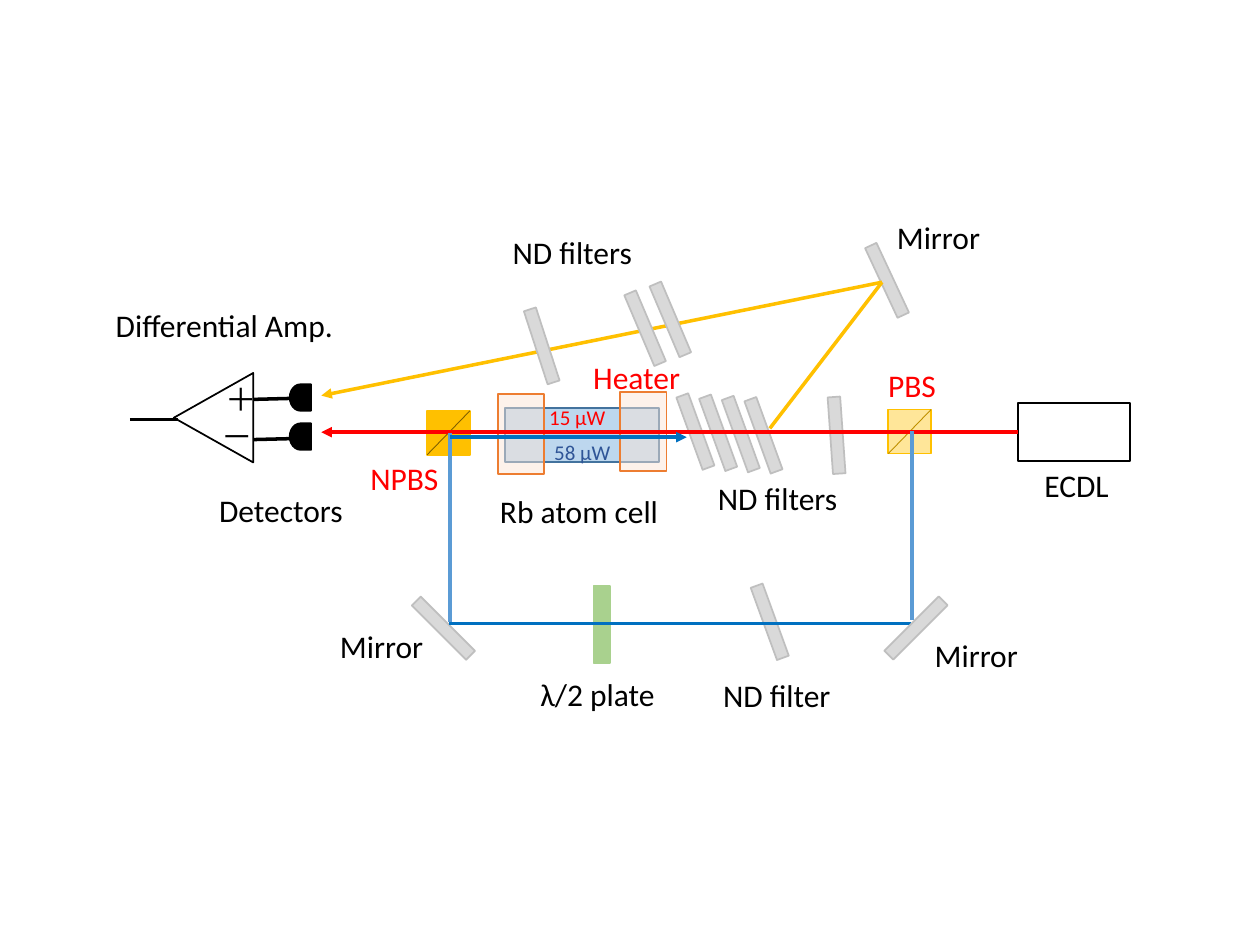
from dataclasses import dataclass

from lxml.etree import SubElement
from pptx import Presentation
from pptx.dml.color import RGBColor
from pptx.enum.shapes import MSO_CONNECTOR, MSO_SHAPE
from pptx.enum.text import MSO_AUTO_SIZE
from pptx.oxml.ns import qn
from pptx.util import Inches, Pt


@dataclass(frozen=True)
class Theme:
    font: str = "Calibri"
    label_size: int = 18
    power_size: int = 12
    black: str = "000000"
    white: str = "FFFFFF"
    red: str = "FF0000"
    gold: str = "FFC000"
    pale_gold: str = "FFE699"
    brown: str = "BF9000"
    dark_brown: str = "806000"
    blue: str = "0070C0"
    light_blue: str = "5B9BD5"
    navy: str = "2F5597"
    cell_fill: str = "BDD7EE"
    cell_line: str = "43739E"
    heater_fill: str = "FBE5D6"
    heater_line: str = "ED7D31"
    green: str = "A9D18E"
    glass: str = "D9D9D9"
    glass_edge: str = "BFBFBF"


theme = Theme()
presentation = Presentation()
presentation.slide_width = Inches(10)
presentation.slide_height = Inches(7.5)
slide = presentation.slides.add_slide(presentation.slide_layouts[6])


def add_part(left, top, width, height, fill, line, kind=MSO_SHAPE.RECTANGLE, rotation=0):
    shape = slide.shapes.add_shape(kind, Inches(left), Inches(top), Inches(width), Inches(height))
    shape.rotation = rotation
    shape.shadow.inherit = False
    shape.fill.solid()
    shape.fill.fore_color.rgb = RGBColor.from_string(fill)
    shape.line.color.rgb = RGBColor.from_string(line)
    shape.line.width = Pt(1)
    return shape


def add_line(start, end, color, width=2, arrow=False):
    connector = slide.shapes.add_connector(
        MSO_CONNECTOR.STRAIGHT, *(Inches(value) for value in (*start, *end)))
    connector.line.color.rgb = RGBColor.from_string(color)
    connector.line.width = Pt(width)
    if arrow:
        SubElement(connector.line._get_or_add_ln(), qn("a:tailEnd"), type="triangle")
    SubElement(connector._element.spPr, qn("a:effectLst"))
    return connector


# Atom cell with its two half-transparent heaters
add_part(4.01, 3.24, 1.22, 0.43, theme.cell_fill, theme.cell_line)
for left, top in [(4.92, 3.11), (3.95, 3.13)]:
    heater = add_part(left, top, 0.37, 0.63, theme.heater_fill, theme.heater_line)
    heater_color = heater._element.spPr.find(qn("a:solidFill"))[0]
    SubElement(heater_color, qn("a:alpha"), val="48000")

# Half-wave plate
add_part(4.71, 4.65, 0.13, 0.61, theme.green, theme.green)

# Mirror and filters that lie behind the beams
filter_row = [(5.47 + 0.18 * step, 3.12 + 0.01 * step, 340) for step in range(4)]
for left, top, rotation in [(6.99, 1.92, 335), (6.06, 4.63, 340), *filter_row, (6.59, 3.15, 356)]:
    add_part(left, top, 0.1, 0.61, theme.glass, theme.glass_edge, rotation=rotation)

# Beam splitters and their diagonals
for left, top, fill, diagonal in [
    (7.05, 3.25, theme.pale_gold, theme.brown),
    (3.39, 3.26, theme.gold, theme.dark_brown),
]:
    add_part(left, top, 0.34, 0.35, fill, theme.gold)
    add_line((left + 0.34, top), (left, top + 0.35), diagonal, width=0.5)

# Laser and probe beam
laser = add_part(8.08, 3.2, 0.89, 0.46, theme.white, theme.black)
probe = add_line((8.08, 3.43), (2.55, 3.43), theme.red, arrow=True)
probe.begin_connect(laser, 1)

# Detectors, their wires and the differential amplifier
for detector_top, wire_start, wire_end in [
    (3.36, (1.97, 3.49), (2.36, 3.48)),
    (3.05, (2.01, 3.17), (2.39, 3.16)),
]:
    add_line(wire_start, wire_end, theme.black)
    detector = add_part(2.3, detector_top, 0.17, 0.21, theme.black, theme.black,
                        MSO_SHAPE.FLOWCHART_DELAY)
    detector._element.spPr.get_or_add_xfrm().set("flipH", "1")
add_part(1.34, 3, 0.71, 0.63, theme.white, theme.black, MSO_SHAPE.ISOSCELES_TRIANGLE, 270)
add_line((1.03, 3.33), (1.41, 3.33), theme.black)

# Pump beam path and its lower mirrors
add_part(3.47, 4.68, 0.1, 0.61, theme.glass, theme.glass_edge, rotation=315)
add_line((7.23, 4.95), (3.56, 4.95), theme.blue)
add_line((7.24, 3.42), (7.24, 4.92), theme.light_blue)
add_line((3.57, 3.44), (3.57, 4.94), theme.light_blue)
add_part(7.22, 4.68, 0.1, 0.61, theme.glass, theme.glass_edge, rotation=45)
add_line((3.57, 3.47), (5.45, 3.47), theme.blue, arrow=True)

# Reference beam, with its filters in front
add_line((7, 2.24), (6.11, 3.4), theme.gold)
add_line((7, 2.24), (2.55, 3.14), theme.gold, arrow=True)
for left, top, rotation in [(5.27, 2.23, 337), (5.07, 2.3, 337), (4.25, 2.44, 342)]:
    add_part(left, top, 0.1, 0.61, theme.glass, theme.glass_edge, rotation=rotation)

# Labels: text, left, top, width, color, size
labels = [
    ("－", 1.66, 3.26, 0.45, theme.black, theme.label_size),
    ("＋", 1.69, 2.97, 0.45, theme.black, theme.label_size),
    ("Differential Amp.", 0.82, 2.38, 1.95, theme.black, theme.label_size),
    ("Detectors", 1.64, 3.85, 1.19, theme.black, theme.label_size),
    ("ND filters", 3.97, 1.8, 1.16, theme.black, theme.label_size),
    ("ND filters", 5.6, 3.75, 1.16, theme.black, theme.label_size),
    ("ND filter", 5.64, 5.32, 1.07, theme.black, theme.label_size),
    ("λ/2 plate", 4.19, 5.31, 1.18, theme.black, theme.label_size),
    ("Mirror", 7.32, 5, 0.87, theme.black, theme.label_size),
    ("Mirror", 2.6, 4.93, 0.87, theme.black, theme.label_size),
    ("Mirror", 7.02, 1.68, 0.87, theme.black, theme.label_size),
    ("PBS", 6.95, 2.86, 0.58, theme.red, theme.label_size),
    ("NPBS", 2.84, 3.59, 0.75, theme.red, theme.label_size),
    ("ECDL", 8.19, 3.65, 0.72, theme.black, theme.label_size),
    ("Rb atom cell", 3.87, 3.86, 1.47, theme.black, theme.label_size),
    ("Heater", 4.61, 2.79, 0.9, theme.red, theme.label_size),
    ("58 μW", 4.3, 3.44, 0.65, theme.navy, theme.power_size),
    ("15 μW", 4.26, 3.16, 0.65, theme.red, theme.power_size),
]
for text, left, top, width, color, size in labels:
    height = 0.4 if size == theme.label_size else 0.3
    label = slide.shapes.add_textbox(Inches(left), Inches(top), Inches(width), Inches(height))
    label.text_frame.word_wrap = False
    label.text_frame.auto_size = MSO_AUTO_SIZE.SHAPE_TO_FIT_TEXT
    paragraph = label.text_frame.paragraphs[0]
    paragraph.text = text
    paragraph.font.name = theme.font
    paragraph.font.size = Pt(size)
    paragraph.font.color.rgb = RGBColor.from_string(color)

presentation.save("out.pptx")
